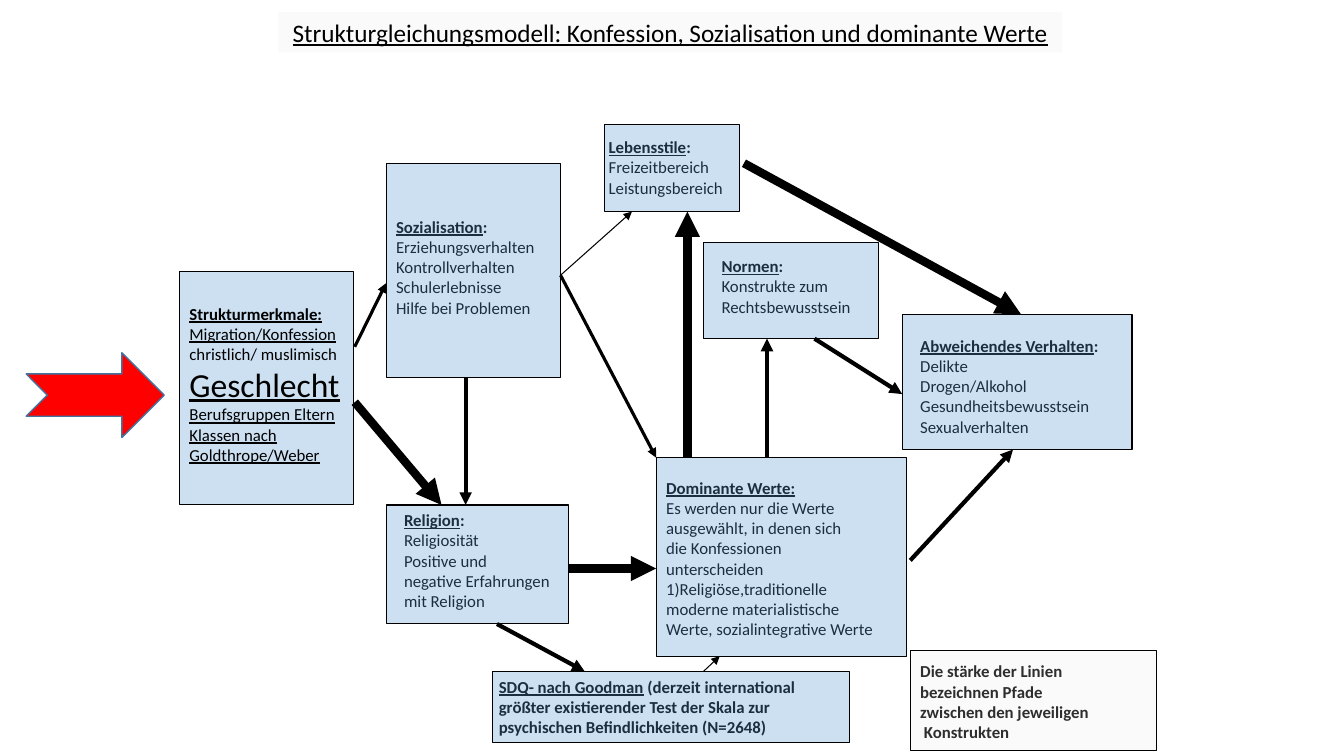
from lxml import etree
from pptx import Presentation
from pptx.dml.color import RGBColor
from pptx.enum.shapes import MSO_CONNECTOR, MSO_SHAPE
from pptx.enum.text import MSO_ANCHOR, MSO_AUTO_SIZE, PP_ALIGN
from pptx.oxml.ns import qn
from pptx.util import Pt

RECT, NOTCHED = MSO_SHAPE.RECTANGLE, MSO_SHAPE.NOTCHED_RIGHT_ARROW
STRAIGHT = MSO_CONNECTOR.STRAIGHT
TOP, CENTER, NO_FIT = MSO_ANCHOR.TOP, PP_ALIGN.CENTER, MSO_AUTO_SIZE.NONE

THEME = {
    "font": "Calibri", "ink": "000000",
    "construct": ("5B9BD5", 30), "grey": ("E7E6E6", 20),
    "arrow": ("FF0000", 100), "arrow_line": "43739E",
    "title": 18, "body": 12, "emphasis": 24,
    "outline": 0.75, "thin": 0.75, "medium": 2.25, "strong": 3, "heavy": 6,
}

# ---- Content ----
TITLE = "Strukturgleichungsmodell: Konfession, Sozialisation und dominante Werte"
TITLE_AT = (198.7, 8.6, 560.2, 28.8)
ARROW_AT = (18.7, 252, 98.6, 60.5)

# Run formats: heading, bold, underlined, large underlined, plain
FORMATS = {
    "h": {"bold": True, "underline": True},
    "b": {"bold": True},
    "u": {"underline": True},
    "e": {"underline": True, "size": Pt(THEME["emphasis"])},
    "p": {},
}


def topic(name, *lines):
    """Underlined heading with a colon, then plain lines."""
    return [[(name, "h"), (":", "b")]] + [[(line, "p")] for line in lines]


# (fill, box: left top width height, text: left top width, paragraphs)
CONSTRUCTS = [
    ("construct", (275.8, 116.6, 124.6, 153.4), (275.8, 151.2, 118),
     topic("Sozialisation", "Erziehungsverhalten", "Kontrollverhalten",
           "Schulerlebnisse", "Hilfe bei Problemen")),
    ("construct", (432, 88.6, 96.5, 62.6), (427.7, 94.3, 100),
     topic("Lebensstile", "Freizeitbereich", "Leistungsbereich")),
    ("construct", (468.7, 326.9, 178.6, 141.8), (468.7, 337.7, 168),
     [[("Dominante Werte:", "h")]] + [[(line, "p")] for line in (
         "Es werden nur die Werte", "ausgewählt, in denen sich",
         "die Konfessionen", "unterscheiden", "1)Religiöse,traditionelle",
         "moderne materialistische", "Werte, sozialintegrative Werte")]),
    ("construct", (275.8, 360.7, 130.3, 85), (281.5, 360.7, 123),
     topic("Religion", "Religiosität", "Positive und",
           "negative Erfahrungen", "mit Religion")),
    ("construct", (644.4, 224.6, 164.2, 96.5), (650.2, 236.2, 179.3),
     topic("Abweichendes Verhalten", "Delikte", "Drogen/Alkohol",
           "Gesundheitsbewusstsein", "Sexualverhalten")),
    ("construct", (502.6, 173.5, 124.6, 68.4), (508.3, 179.3, 111),
     topic("Normen", "Konstrukte zum", "Rechtsbewusstsein")),
    ("construct", (352.1, 479.5, 254.9, 51.1), (349.2, 479.5, 260.6),
     [[("SDQ- nach Goodman", "h"),
       (" (derzeit international größter existierender Test der Skala zur", "b")],
      [("psychischen Befindlichkeiten (N=2648)", "b")]]),
    ("grey", (650.2, 464.4, 175.7, 72), (650.2, 468.7, 142),
     [[(line, "b")] for line in (
         "Die stärke der Linien", "bezeichnen Pfade",
         "zwischen den jeweiligen", " Konstrukten")]),
]
FEATURES_BOX, FEATURES_TEXT = (128.2, 193.7, 124.6, 167), (128.2, 213.1, 130.3)
FEATURES = [
    [("Strukturmerkmale:", "h")],
    [("Migration/Konfession", "u")],
    [("christlich/ muslimisch", "p")],
    [("Geschlecht", "e")],
    [("Berufsgruppen Eltern Klassen nach Goldthrope/Weber", "u")],
]

# Paths: (strength, from x, from y, to x, to y)
PATHS = [
    ("heavy", 253.4, 287.3, 315.4, 360.7),
    ("medium", 253.4, 247.7, 275.8, 202.3),
    ("heavy", 406.1, 406.1, 468.7, 406.1),
    ("strong", 332.6, 270, 332.6, 360.7),
    ("medium", 400.4, 196.6, 468.7, 326.9),
    ("thin", 400.4, 196.6, 451.4, 151.2),
    ("strong", 547.9, 326.9, 547.9, 241.9),
    ("heavy", 491, 326.9, 491, 151.2),
    ("strong", 581.8, 241.9, 644.4, 281.5),
    ("strong", 650.2, 400.3, 723.6, 321.1),
    ("heavy", 531.4, 116.6, 729.4, 224.6),
    ("strong", 355, 445.7, 417.6, 479.5),
    ("thin", 502.6, 479.5, 514.1, 468.7),
]


# ---- Helpers ----
def set_fill(s, color, opacity):
    s.fill.solid()
    s.fill.fore_color.rgb = RGBColor.from_string(color)
    if opacity < 100:
        clr = s.fill._xPr.find(qn("a:solidFill"))[0]
        etree.SubElement(clr, qn("a:alpha"), val=str(opacity * 1000))


def set_line(s, color, width):
    s.line.color.rgb = RGBColor.from_string(color)
    s.line.width = Pt(width)


def add_run(p, text, size, formats):
    r = p.add_run()
    r.text = text
    r.font.color.rgb = RGBColor.from_string(THEME["ink"])
    for name, value in {"name": THEME["font"], "size": Pt(size), **formats}.items():
        setattr(r.font, name, value)


def add_box(shapes, kind, at, fill, color, width):
    s = shapes.add_shape(kind, *map(Pt, at))
    s.shadow.inherit = False
    set_fill(s, *THEME[fill])
    set_line(s, color, width)


def add_text(shapes, at, paragraphs):
    height = 1.22 * THEME["body"] * len(paragraphs) + 7.2
    tf = shapes.add_textbox(*map(Pt, at), Pt(height)).text_frame
    tf.word_wrap = True
    for i, runs in enumerate(paragraphs):
        p = tf.paragraphs[0] if i == 0 else tf.add_paragraph()
        for text, style in runs:
            add_run(p, text, THEME["body"], FORMATS[style])


def add_path(shapes, strength, *ends):
    c = shapes.add_connector(STRAIGHT, *map(Pt, ends))
    set_line(c, THEME["ink"], THEME[strength])
    etree.SubElement(c.line._get_or_add_ln(), qn("a:tailEnd"), type="triangle")
    etree.SubElement(c._element.spPr, qn("a:effectLst"))


def main():
    prs = Presentation()
    prs.slide_width, prs.slide_height = Pt(960), Pt(540)
    slide = prs.slides.add_slide(prs.slide_layouts[5])
    shapes = slide.shapes

    # Title
    title = shapes.title
    for name, value in zip(("left", "top", "width", "height"), TITLE_AT):
        setattr(title, name, Pt(value))
    set_fill(title, *THEME["grey"])
    tf = title.text_frame
    tf.word_wrap, tf.auto_size, tf.vertical_anchor = False, NO_FIT, TOP
    tf.paragraphs[0].alignment = CENTER
    add_run(tf.paragraphs[0], TITLE, THEME["title"], FORMATS["u"])

    # Structural features: text in front of its box
    outline = (THEME["ink"], THEME["outline"])
    add_box(shapes, RECT, FEATURES_BOX, "construct", *outline)
    add_text(shapes, FEATURES_TEXT, FEATURES)

    # Other constructs: translucent box over its text
    for fill, box_at, text_at, paragraphs in CONSTRUCTS:
        add_text(shapes, text_at, paragraphs)
        add_box(shapes, RECT, box_at, fill, *outline)

    # Paths and the red pointer
    for path_ends in PATHS:
        add_path(shapes, *path_ends)
    add_box(shapes, NOTCHED, ARROW_AT, "arrow", THEME["arrow_line"], 1)

    prs.save("out.pptx")


if __name__ == "__main__":
    main()
